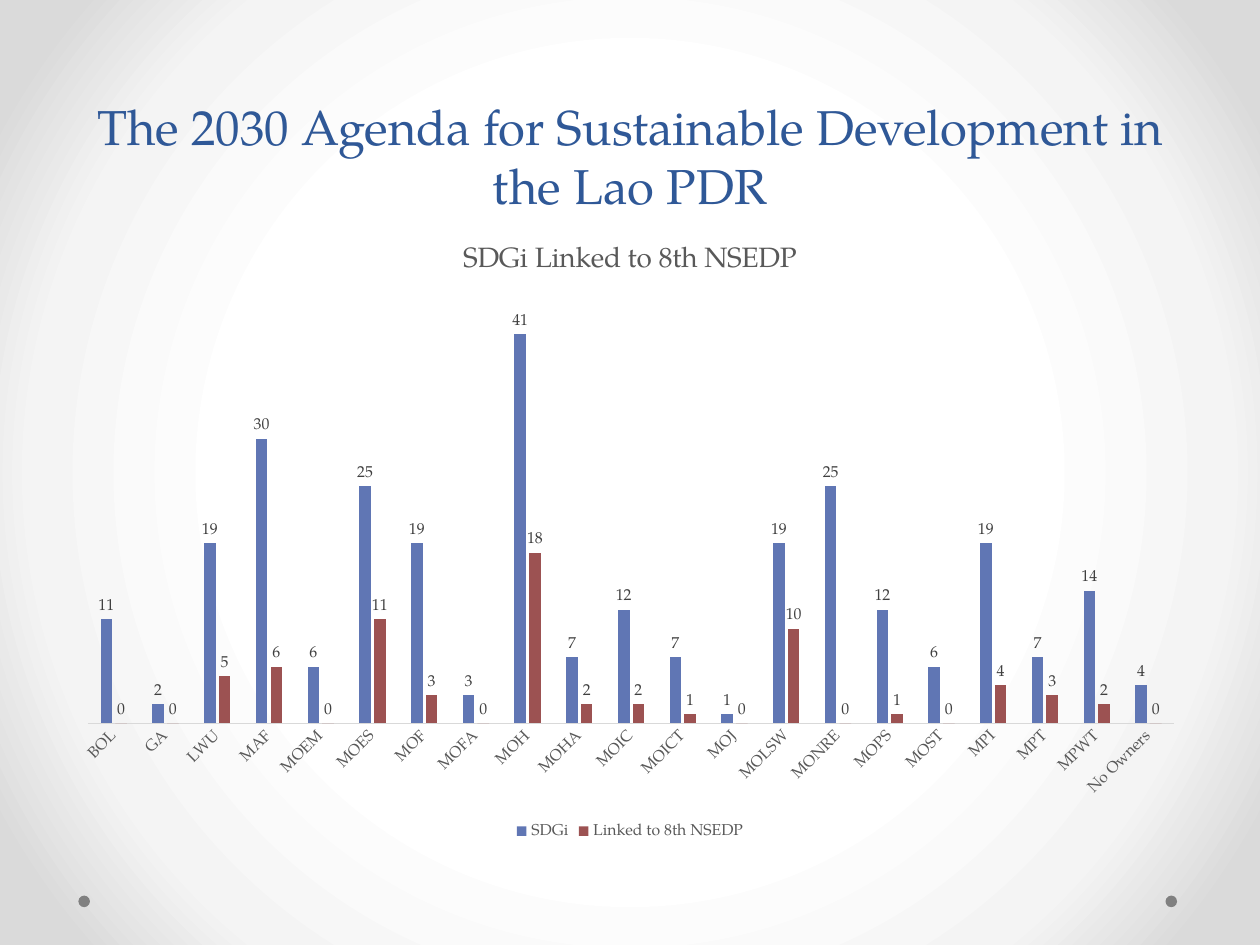
from lxml import etree
from pptx import Presentation
from pptx import util as u
from pptx.chart.data import CategoryChartData
from pptx.dml.color import RGBColor
from pptx.enum import chart as charts, shapes, text
from pptx.oxml import parse_xml
from pptx.oxml.ns import nsdecls

FONT = "TeX Gyre Pagella"
TITLE_BLUE = RGBColor(0x2F, 0x58, 0x97)
BAR_BLUE = RGBColor(0x60, 0x76, 0xB4)
BAR_RED = RGBColor(0x9C, 0x52, 0x52)
BLACK = RGBColor(0, 0, 0)
LABEL_GRAY = RGBColor(0x40, 0x40, 0x40)
TEXT_GRAY = RGBColor(0x59, 0x59, 0x59)
AXIS_GRAY = RGBColor(0xD9, 0xD9, 0xD9)
DOT_GRAY = RGBColor(0x80, 0x80, 0x80)
BACKGROUND_STOPS = [(50, "FFFFFF"), (76, "F4F4F4"), (92, "DADADA")]

# Owner: (SDG indicators, indicators linked to the plan)
OWNERS = {
    "BOL": (11, 0), "GA": (2, 0), "LWU": (19, 5), "MAF": (30, 6),
    "MOEM": (6, 0), "MOES": (25, 11), "MOF": (19, 3), "MOFA": (3, 0),
    "MOH": (41, 18), "MOHA": (7, 2), "MOIC": (12, 2), "MOICT": (7, 1),
    "MOJ": (1, 0), "MOLSW": (19, 10), "MONRE": (25, 0), "MOPS": (12, 1),
    "MOST": (6, 0), "MPI": (19, 4), "MPT": (7, 3), "MPWT": (14, 2),
    "No Owners": (4, 0),
}
SERIES = [("SDGi", BAR_BLUE), ("Linked to 8th NSEDP", BAR_RED)]


class SlideBuilder:
    def __init__(self, slide, font_name):
        self.slide = slide
        self.font_name = font_name

    def style(self, font, size, color):
        font.name = self.font_name
        font.size = u.Pt(size)
        font.bold = False
        font.color.rgb = color

    def background(self, stops):
        """Radial gradient spreading from the slide centre."""
        stop_xml = "".join(
            f'<a:gs pos="{position * 1000}"><a:srgbClr val="{color}"/></a:gs>'
            for position, color in stops)
        self.slide.element.cSld.insert(0, parse_xml(
            f'<p:bg {nsdecls("p", "a")}><p:bgPr><a:gradFill rotWithShape="1">'
            f'<a:gsLst>{stop_xml}</a:gsLst><a:path path="circle">'
            '<a:fillToRect l="50000" t="50000" r="50000" b="50000"/></a:path>'
            '</a:gradFill><a:effectLst/></p:bgPr></p:bg>'))

    def dot(self, left, top, size):
        dot = self.slide.shapes.add_shape(
            shapes.MSO_SHAPE.OVAL, u.Pt(left), u.Pt(top), u.Pt(size), u.Pt(size))
        dot.shadow.inherit = False
        dot.fill.solid()
        dot.fill.fore_color.rgb = DOT_GRAY
        dot.line.fill.background()

    def title(self, wording, left, top, width, height):
        title = self.slide.shapes.title
        title.left, title.top = u.Pt(left), u.Pt(top)
        title.width, title.height = u.Pt(width), u.Pt(height)
        frame = title.text_frame
        frame.text = wording
        frame.word_wrap = True
        frame.auto_size = text.MSO_AUTO_SIZE.NONE
        frame.vertical_anchor = text.MSO_ANCHOR.BOTTOM
        para = frame.paragraphs[0]
        para.alignment = text.PP_ALIGN.CENTER
        self.style(para.runs[0].font, 28, TITLE_BLUE)

    def column_chart(self, heading, owners, series, left, top, width, height):
        data = CategoryChartData()
        data.categories = list(owners)
        for (name, _), values in zip(series, zip(*owners.values())):
            data.add_series(name, values)
        chart = self.slide.shapes.add_chart(
            charts.XL_CHART_TYPE.COLUMN_CLUSTERED, u.Pt(left), u.Pt(top),
            u.Pt(width), u.Pt(height), data).chart
        self.style(chart.font, 10, BLACK)

        chart.has_title = True
        chart.chart_title.include_in_layout = False
        frame = chart.chart_title.text_frame
        frame.text = heading
        self.style(frame.paragraphs[0].runs[0].font, 16, TEXT_GRAY)

        chart.has_legend = True
        chart.legend.position = charts.XL_LEGEND_POSITION.BOTTOM
        chart.legend.include_in_layout = False
        self.style(chart.legend.font, 9, TEXT_GRAY)

        values = chart.value_axis
        values.visible = False
        values.has_major_gridlines = False
        values.minimum_scale, values.maximum_scale = 0, 45

        names = chart.category_axis
        names.major_tick_mark = charts.XL_TICK_MARK.NONE
        names.format.line.color.rgb = AXIS_GRAY
        names.format.line.width = u.Pt(0.75)
        self.style(names.tick_labels.font, 9, TEXT_GRAY)
        names._element.txPr.bodyPr.set("rot", "-2700000")

        plot = chart.plots[0]
        plot.vary_by_categories = False
        plot.gap_width, plot.overlap = 219, -27
        for bars, (_, color) in zip(plot.series, series):
            bars.format.fill.solid()
            bars.format.fill.fore_color.rgb = color
            labels = bars.data_labels
            labels.show_value = True
            labels.position = charts.XL_LABEL_POSITION.OUTSIDE_END
            self.style(labels.font, 9, LABEL_GRAY)


def main():
    deck = Presentation()
    deck.slide_width, deck.slide_height = u.Pt(720), u.Pt(540)
    page = SlideBuilder(deck.slides.add_slide(deck.slide_layouts[5]), FONT)
    page.background(BACKGROUND_STOPS)
    for left in (666, 44.8):
        page.dot(left, 511.8, 6.6)
    page.title("The 2030 Agenda for Sustainable Development in the Lao PDR",
               36, 0, 648, 126)
    page.column_chart("SDGi Linked to 8th NSEDP", OWNERS, SERIES,
                      36, 126, 648, 356.4)
    deck.save("out.pptx")


if __name__ == "__main__":
    main()
